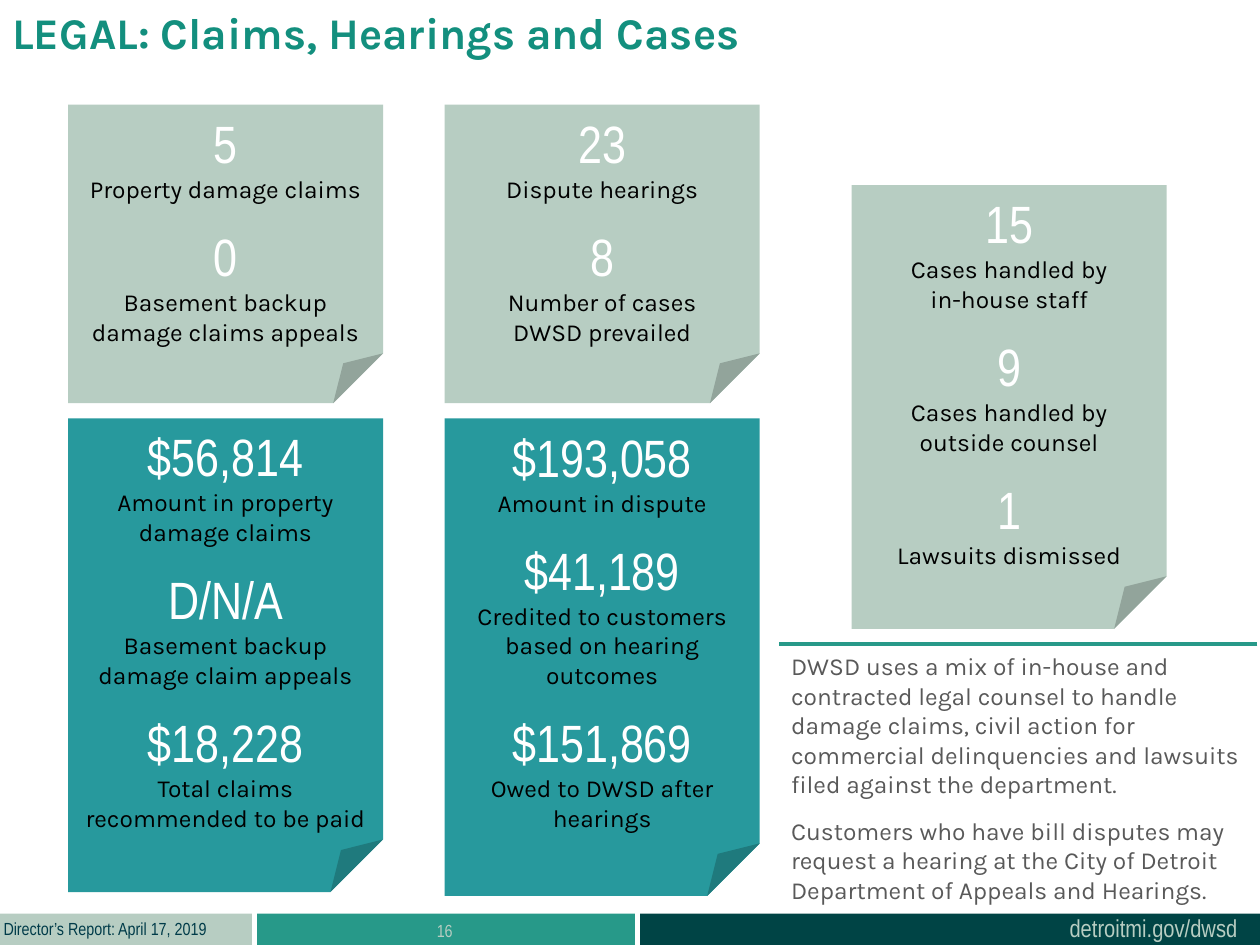
from copy import deepcopy

from lxml import etree
from pptx import Presentation
from pptx import util as u
from pptx.dml.color import RGBColor
from pptx.enum import shapes, text
from pptx.oxml.ns import qn

COLORS = {
    "white": "FFFFFF", "black": "000000", "gray": "595959", "sage": "B7CDC2",
    "teal": "27999D", "green": "279989", "title": "138F7E",
    "dark": "004445", "navy": "003B49",
}
NARROW, KARLA = "Arial Narrow", "Karla"
NOTE_WIDTH = 2.5
COLUMNS = (0.54, 3.53, 6.76)
UPPER, LOWER = 0.83, 3.32

# left, top, height, fill, (figure, label) pairs
NOTES = [
    (COLUMNS[0], UPPER, 2.37, "sage", [
        ("5", "Property damage claims"),
        ("0", "Basement backup\ndamage claims appeals")]),
    (COLUMNS[0], LOWER, 3.76, "teal", [
        ("$56,814", "Amount in property\ndamage claims"),
        ("D/N/A", "Basement backup damage claim appeals"),
        ("$18,228", "Total claims recommended to be paid")]),
    (COLUMNS[1], UPPER, 2.37, "sage", [
        ("23", "Dispute hearings"),
        ("8", "Number of cases\nDWSD prevailed")]),
    (COLUMNS[1], LOWER, 3.79, "teal", [
        ("$193,058", "Amount in dispute"),
        ("$41,189", "Credited to customers based on hearing outcomes"),
        ("$151,869", "Owed to DWSD after hearings")]),
    (COLUMNS[2], 1.47, 3.52, "sage", [
        ("15", "Cases handled by\nin-house staff"),
        ("9", "Cases handled by\noutside counsel"),
        ("1", "Lawsuits dismissed")]),
]
EXPLANATION = [
    "DWSD uses a mix of in-house and contracted legal counsel to handle damage "
    "claims, civil action for commercial delinquencies and lawsuits filed "
    "against the department.",
    "Customers who have bill disputes may request a hearing at the City of "
    "Detroit Department of Appeals and Hearings.",
]


def rgb(name):
    return RGBColor.from_string(COLORS[name])


def write(frame, words, size, font, color, bold=False, center=False, before=0):
    """Add a paragraph to the frame, using its empty first one if there is one."""
    para = frame.paragraphs[0]
    if para.runs:
        para = frame.add_paragraph()
        para.space_before = u.Pt(before)
    para.text = words
    para.alignment = text.PP_ALIGN.CENTER if center else text.PP_ALIGN.LEFT
    for span in para.runs:
        span.font.size, span.font.name, span.font.bold = u.Pt(size), font, bold
        span.font.color.rgb = rgb(color)
    # a line break needs the run's size, or it makes its line taller
    for line_break in para._p.findall(qn("a:br")):
        line_break.append(deepcopy(para.runs[0]._r.rPr))


def add_text_frame(page, left, top, width, height, wrap=True):
    box = page.shapes.add_textbox(*map(u.Inches, (left, top, width, height)))
    box.text_frame.word_wrap = wrap
    return box.text_frame


def add_filled(page, kind, left, top, width, height, fill):
    shape = page.shapes.add_shape(kind, *map(u.Inches, (left, top, width, height)))
    shape.shadow.inherit = False
    shape.fill.solid()
    shape.fill.fore_color.rgb = rgb(fill)
    shape.line.fill.background()
    return shape


def add_footer(page, top):
    for left, width, fill in ((2.04, 3, "green"), (5.08, 5, "dark"), (0, 2, "sage")):
        add_filled(page, shapes.MSO_SHAPE.RECTANGLE, left, top, width, 0.25, fill)
    address = add_text_frame(page, 8.39, top - 0.05, 1.55, 0.34, wrap=False)
    write(address, "detroitmi.gov/dwsd", 14, NARROW, "sage")
    report = add_text_frame(page, -0.07, top - 0.01, 1.86, 0.27, wrap=False)
    write(report, "Director’s Report: April 17, 2019", 10, NARROW, "navy")
    number = add_text_frame(page, 2.03, top, 3, 0.4)
    write(number, "16", 10, NARROW, "sage", center=True)


def add_note(page, left, top, height, fill, facts):
    """Place a folded note that lists large figures, each above its label."""
    note = add_filled(page, shapes.MSO_SHAPE.FOLDED_CORNER,
                      left, top, NOTE_WIDTH, height, fill)
    frame = note.text_frame
    frame.word_wrap = True
    frame.vertical_anchor = text.MSO_ANCHOR.TOP
    for figure, label in facts:
        write(frame, figure, 30, NARROW, "white", center=True, before=12)
        write(frame, label, 14, KARLA, "black", center=True)


def add_explanation(page, left, top, width, height):
    frame = add_text_frame(page, left, top, width, height)
    for words in EXPLANATION:
        write(frame, words, 14, KARLA, "gray", before=10)
    rule = page.shapes.add_connector(
        shapes.MSO_CONNECTOR.STRAIGHT,
        *map(u.Inches, (left + width - 0.02, top - 0.01, left, top - 0.01)))
    rule.line.color.rgb = rgb("green")
    rule.line.width = u.Pt(2.25)
    etree.SubElement(rule._element.spPr, qn("a:effectLst"))


def main():
    deck = Presentation()
    deck.slide_width, deck.slide_height = u.Inches(10), u.Inches(7.5)
    page = deck.slides.add_slide(deck.slide_layouts[6])
    add_footer(page, 7.25)
    for note in NOTES:
        add_note(page, *note)
    add_explanation(page, 6.18, 5.12, 3.82, 2.12)
    title = add_text_frame(page, 0, 0, 7.59, 0.77)
    write(title, "LEGAL: Claims, Hearings and Cases", 25, KARLA, "title", bold=True)
    deck.save("out.pptx")


if __name__ == "__main__":
    main()
